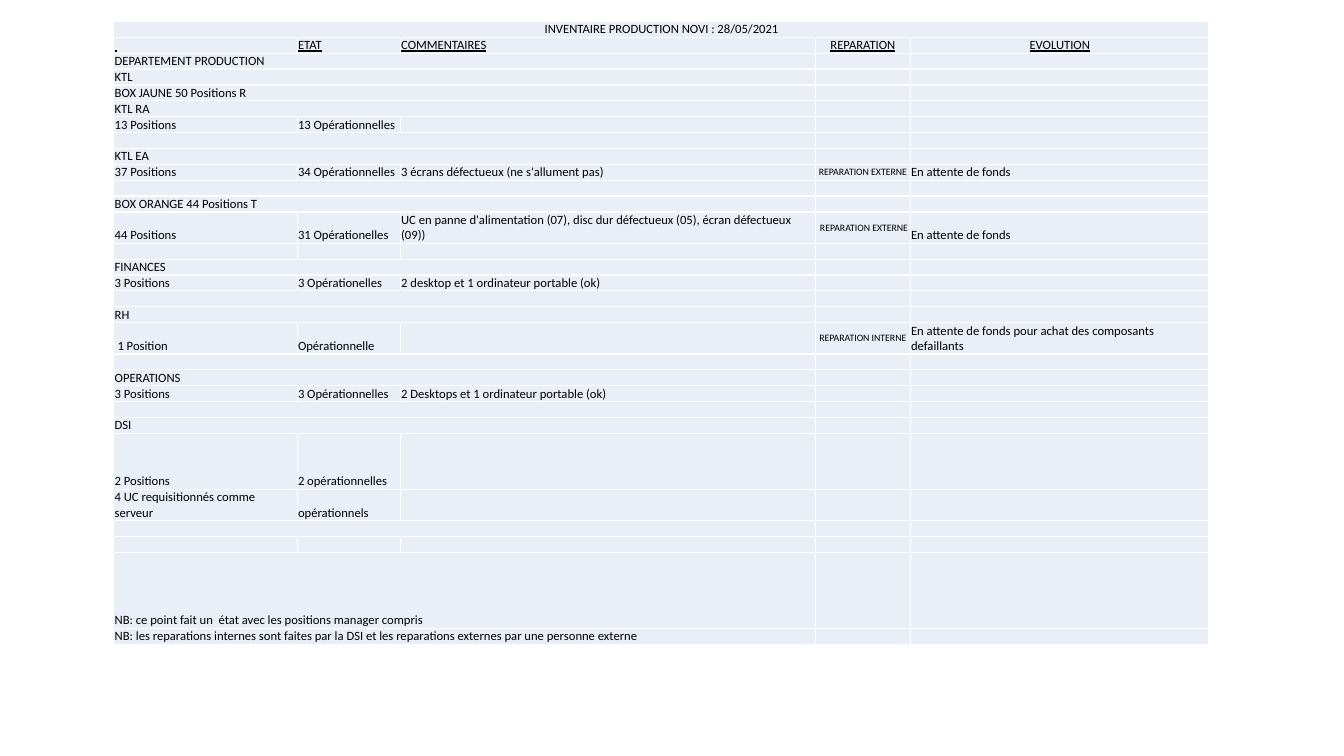
import pptx
import pptx.util
import pptx.dml.color
import pptx.enum.text
import pptx.oxml
import pptx.oxml.ns

Cm = pptx.util.Cm
CENTER = pptx.enum.text.PP_ALIGN.CENTER
LEFT = pptx.enum.text.PP_ALIGN.LEFT
MIDDLE = pptx.enum.text.MSO_ANCHOR.MIDDLE
BOTTOM = pptx.enum.text.MSO_ANCHOR.BOTTOM

TITLE = "INVENTAIRE PRODUCTION NOVI : 28/05/2021"
HEADINGS = (" ", "ETAT", "COMMENTAIRES", "REPARATION", "EVOLUTION")
BLANK = ("",)
EMPTY = ("", "", "", "", "")
INVENTORY = [
    ("DEPARTEMENT PRODUCTION",),
    ("KTL",),
    ("BOX JAUNE 50 Positions R",),
    ("KTL RA",),
    ("13 Positions", "13 Opérationnelles", "", "", ""),
    BLANK,
    ("KTL EA",),
    ("37 Positions", "34 Opérationnelles", "3 écrans défectueux (ne s'allument pas)",
     "REPARATION EXTERNE", "En attente de fonds"),
    BLANK,
    ("BOX ORANGE 44 Positions T",),
    ("44 Positions", "31 Opérationelles",
     "UC en panne d'alimentation (07), disc dur défectueux (05), écran défectueux (09))",
     " REPARATION EXTERNE", "En attente de fonds"),
    EMPTY,
    ("FINANCES",),
    ("3 Positions", "3 Opérationelles", "2 desktop et 1 ordinateur portable (ok)", "", ""),
    BLANK,
    ("RH",),
    (" 1 Position", "Opérationnelle", "", "REPARATION INTERNE",
     "En attente de fonds pour achat des composants defaillants"),
    BLANK,
    ("OPERATIONS",),
    ("3 Positions", "3 Opérationnelles", "2 Desktops et 1 ordinateur portable (ok)", "", ""),
    BLANK,
    ("DSI",),
    ("2 Positions", "2 opérationnelles", "", "", ""),
    ("4 UC requisitionnés comme serveur", "opérationnels", "", "", ""),
    BLANK,
    EMPTY,
    ("NB: ce point fait un  état avec les positions manager compris",),
    ("NB: les reparations internes sont faites par la DSI et les reparations externes "
     "par une personne externe",),
]
ROWS = [(TITLE,), HEADINGS] + INVENTORY
COLUMN_WIDTHS = (4.62, 2.6, 10.46, 2.39, 7.53)
ROW_HEIGHT = 0.4
TALL_ROWS = {12: 0.79, 18: 0.79, 24: 1.41, 28: 1.92}
REPAIR, EVOLUTION = 3, 4


def color(value):
    return pptx.dml.color.RGBColor.from_string(value)


def add_borders(cell, value="FFFFFF", width=12700):
    properties = cell._tc.get_or_add_tcPr()
    for side in ("lnL", "lnR", "lnT", "lnB"):
        properties.append(pptx.oxml.parse_xml(
            f'<a:{side} {pptx.oxml.ns.nsdecls("a")} w="{width}"><a:solidFill>'
            f'<a:srgbClr val="{value}"/></a:solidFill></a:{side}>'))


def write_cell(cell, text, size=9, align=LEFT, anchor=BOTTOM, underline=False):
    add_borders(cell)
    cell.fill.solid()
    cell.fill.fore_color.rgb = color("EAEFF7")
    cell.margin_left = cell.margin_right = Cm(0.02)
    cell.margin_top, cell.margin_bottom = Cm(0.01), 0
    cell.vertical_anchor = anchor
    para = cell.text_frame.paragraphs[0]
    para.alignment = align
    if text:
        span = para.add_run()
        span.text = text
        span.font.name = "Calibri"
        span.font.size = pptx.util.Pt(size)
        span.font.underline = underline
        span.font.color.rgb = color("000000")
    else:
        para._p.append(pptx.oxml.parse_xml(
            f'<a:endParaRPr {pptx.oxml.ns.nsdecls("a")} sz="{size * 100}">'
            '<a:latin typeface="Calibri"/></a:endParaRPr>'))


def cell_format(row, column):
    if row == 0:
        return {"align": CENTER}
    if row == 1:
        centered = {"align": CENTER, "anchor": MIDDLE} if column in (REPAIR, EVOLUTION) else {}
        return {"underline": True, **centered}
    if column == REPAIR:
        return {"size": 7, "align": CENTER, "anchor": MIDDLE}
    return {}


def main():
    deck = pptx.Presentation()
    deck.slide_width, deck.slide_height = Cm(33.87), Cm(19.05)
    page = deck.slides.add_slide(deck.slide_layouts[6])

    heights = [TALL_ROWS.get(row, ROW_HEIGHT) for row in range(len(ROWS))]
    table = page.shapes.add_table(
        len(ROWS), len(COLUMN_WIDTHS), Cm(2.87), Cm(0.54),
        Cm(sum(COLUMN_WIDTHS)), Cm(sum(heights))).table
    table.first_row = table.horz_banding = False
    for column, width in zip(table.columns, COLUMN_WIDTHS):
        column.width = Cm(width)

    for row, texts in enumerate(ROWS):
        table.rows[row].height = Cm(heights[row])
        for column in range(len(COLUMN_WIDTHS)):
            text = texts[column] if column < len(texts) else ""
            write_cell(table.cell(row, column), text, **cell_format(row, column))
        if len(texts) == 1:
            last = EVOLUTION if row == 0 else REPAIR - 1
            table.cell(row, 0).merge(table.cell(row, last))

    deck.save("out.pptx")


if __name__ == "__main__":
    main()
